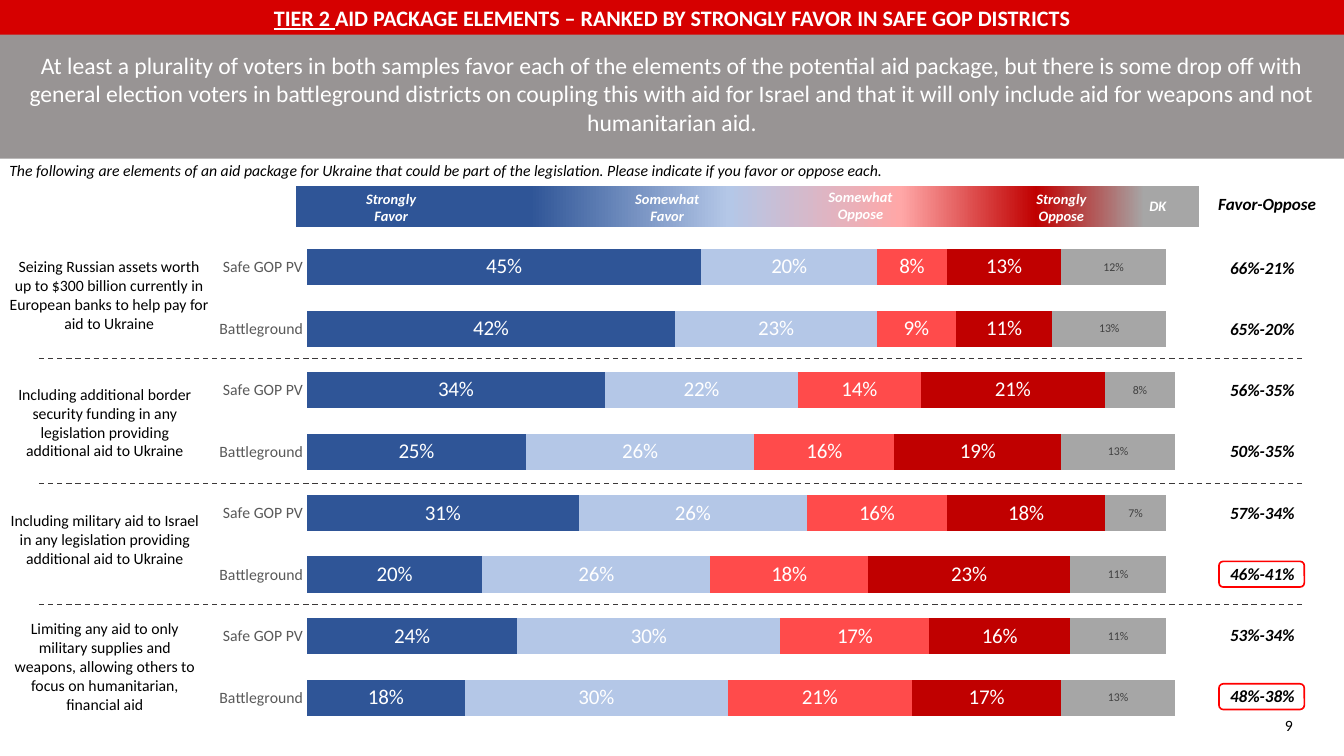
from lxml.etree import SubElement
from pptx import Presentation
from pptx.chart.data import CategoryChartData
from pptx.dml.color import RGBColor
from pptx.enum.chart import XL_CHART_TYPE, XL_LABEL_POSITION, XL_TICK_MARK
from pptx.enum.dml import MSO_LINE
from pptx.enum.shapes import MSO_CONNECTOR, MSO_SHAPE
from pptx.enum.text import PP_ALIGN
from pptx.oxml.ns import qn
from pptx.util import Inches, Pt

COLORS = {
    "banner": "989494", "title": "D60000", "rule": "3B3838", "mark": "FF0000",
    "white": "FFFFFF", "black": "000000", "axis": "595959", "dk_text": "404040",
    "strong_favor": "2F5597", "favor": "B4C7E7", "oppose": "FF4B4B",
    "fade": "FFA7A7", "strong_oppose": "C00000", "dk": "A6A6A6",
}
SERIES = ["strong_favor", "favor", "oppose", "strong_oppose", "dk"]
SAMPLES = ["Safe GOP PV", "Battleground"]

# text, box (x, y, w, h), then one (percentages, favor-oppose) pair per sample
ELEMENTS = [
    ("Seizing Russian assets worth up to $300 billion currently in European banks "
     "to help pay for aid to Ukraine", (0, 33.4, 16.25, 11.4),
     [((45, 20, 8, 13, 12), "66%-21%"), ((42, 23, 9, 11, 13), "65%-20%")]),
    ("Including additional border security funding in any legislation providing "
     "additional aid to Ukraine", (0, 50.25, 15.6, 11.4),
     [((34, 22, 14, 21, 8), "56%-35%"), ((25, 26, 16, 19, 13), "50%-35%")]),
    ("Including military aid to Israel in any legislation providing additional "
     "aid to Ukraine", (0, 67, 15.6, 8.9),
     [((31, 26, 16, 18, 7), "57%-34%"), ((20, 26, 18, 23, 11), "46%-41%")]),
    ("Limiting any aid to only military supplies and weapons, allowing others to "
     "focus on humanitarian, financial aid", (0, 81.25, 15.6, 13.9),
     [((24, 30, 17, 16, 11), "53%-34%"), ((18, 30, 21, 17, 13), "48%-38%")]),
]
LEGEND = [
    ("Strongly\nFavor", (22.36, 24.5, 13.5, 6.1)),
    ("Somewhat\nFavor", (41.77, 24.5, 15.75, 6.1)),
    ("Somewhat Oppose", (59.35, 24.25, 9.35, 6.1)),
    ("Strongly Oppose", (75.25, 24.5, 7.45, 6.1)),
    ("DK", (82.9, 25.4, 6.5, 3.1)),
]
LEGEND_STOPS = [(26, "strong_favor"), (48, "favor"), (67, "fade"),
                (82, "strong_oppose"), (94, "dk")]
DIVIDERS = [47.4, 64, 80]
MARKED = {"46%-41%", "48%-38%"}
ROW_TOP, ROW_STEP = 33.4, 8.1


def rgb(name):
    return RGBColor.from_string(COLORS[name])


class Deck:
    """Style and current slide; boxes are percentages of the slide's size."""

    font = "Calibri"

    def __init__(self, width, height):
        self.prs = Presentation()
        self.prs.slide_width, self.prs.slide_height = Inches(width), Inches(height)
        self.s = self.prs.slides.add_slide(self.prs.slide_layouts[6])

    def place(self, x, y, w, h):
        across, down = self.prs.slide_width / 100, self.prs.slide_height / 100
        return int(x * across), int(y * down), int(w * across), int(h * down)

    def style(self, font, size, color, bold=False, italic=False):
        font.name, font.size = self.font, Pt(size)
        font.bold, font.italic = bold, italic
        font.color.rgb = rgb(color)

    def text(self, box, text, size, color="black", align=PP_ALIGN.CENTER, **style):
        tf = self.s.shapes.add_textbox(*self.place(*box)).text_frame
        tf.word_wrap = True
        tf.text = text
        for p in tf.paragraphs:
            p.alignment = align
            self.style(p.font, size, color, **style)
        return tf.paragraphs[0]

    def block(self, box, fill=None, line=None, kind=MSO_SHAPE.RECTANGLE):
        sp = self.s.shapes.add_shape(kind, *self.place(*box))
        sp.shadow.inherit = False
        if fill:
            sp.fill.solid()
            sp.fill.fore_color.rgb = rgb(fill)
        else:
            sp.fill.background()
        if line:
            sp.line.color.rgb, sp.line.width = rgb(line), Pt(1.25)
        else:
            sp.line.fill.background()
        return sp

    def gradient(self, box, stops):
        sp = self.block(box)
        sp.fill.gradient()
        sp.fill.gradient_angle = 0
        gs_list = next(sp.element.iter(qn("a:gsLst")))
        for gs in list(gs_list):
            gs_list.remove(gs)
        for percent, color in stops:
            gs = SubElement(gs_list, qn("a:gs"), pos=str(percent * 1000))
            SubElement(gs, qn("a:srgbClr"), val=COLORS[color])

    def divider(self, x1, x2, y):
        left, top, width, _ = self.place(x1, y, x2 - x1, 0)
        line = self.s.shapes.add_connector(
            MSO_CONNECTOR.STRAIGHT, left, top, left + width, top)
        line.line.color.rgb, line.line.width = rgb("rule"), Pt(1)
        line.line.dash_style = MSO_LINE.DASH
        SubElement(line.element.spPr, qn("a:effectLst"))

    def stacked_bars(self, box, categories, columns, plot_area):
        data = CategoryChartData(number_format="0%")
        data.categories = categories
        for i, values in enumerate(columns, 1):
            data.add_series(f"Series {i}", values)
        chart = self.s.shapes.add_chart(
            XL_CHART_TYPE.BAR_STACKED, *self.place(*box), data).chart
        chart.has_legend = chart.has_title = False
        self.style(chart.font, 10, "black")

        axis = chart.value_axis
        axis.visible = axis.has_major_gridlines = False
        axis.minimum_scale, axis.maximum_scale = 0, 1
        axis = chart.category_axis
        axis.major_tick_mark = XL_TICK_MARK.NONE
        axis.format.line.fill.background()
        self.style(axis.tick_labels.font, 12, "axis")

        plot = chart.plots[0]
        plot.gap_width, plot.overlap = 70, 100
        plot.vary_by_categories = False
        for series, color in zip(plot.series, SERIES):
            series.format.fill.solid()
            series.format.fill.fore_color.rgb = rgb(color)
            labels = series.data_labels
            labels.show_value = True
            labels.position = XL_LABEL_POSITION.CENTER
            labels.number_format, labels.number_format_is_linked = "0%", False
            self.style(labels.font, *((9, "dk_text") if color == "dk" else (16, "white")))
        self.fix_plot(chart, plot_area)

    def fix_plot(self, chart, plot_area):
        """Pin the inner plot area to shares (x, y, w, h) of the chart."""
        area = next(chart.element.iter(qn("c:plotArea")))
        layout = area.find(qn("c:layout"))
        if layout is None:
            layout = SubElement(area, qn("c:layout"))
            area.insert(0, layout)
        manual = SubElement(layout, qn("c:manualLayout"))
        settings = [("layoutTarget", "inner"), ("xMode", "edge"), ("yMode", "edge"),
                    *zip("xywh", plot_area)]
        for tag, value in settings:
            SubElement(manual, qn(f"c:{tag}"), val=str(value))


def main():
    deck = Deck(14.22, 8)
    deck.block((0, 0, 100, 21), "banner")
    deck.block((0, 0, 100, 4.6), "title")
    p = deck.text((0, 0, 100, 4.9), "TIER 2 ", 16.8, "white", bold=True)
    p.runs[0].font.underline = True
    r = p.add_run()
    r.text = "AID PACKAGE ELEMENTS – RANKED BY STRONGLY FAVOR IN SAFE GOP DISTRICTS"
    deck.text((0.35, 6.1, 99.3, 12.6),
              "At least a plurality of voters in both samples favor each of the elements "
              "of the potential aid package, but there is some drop off with general "
              "election voters in battleground districts on coupling this with aid for "
              "Israel and that it will only include aid for weapons and not humanitarian "
              "aid.", 18, "white")
    deck.text((0, 20.6, 81, 3.8),
              "The following are elements of an aid package for Ukraine that could be part "
              "of the legislation. Please indicate if you favor or oppose each.",
              12, align=PP_ALIGN.LEFT, italic=True)

    deck.gradient((22, 24.6, 67.2, 5.4), LEGEND_STOPS)
    for label, box in LEGEND:
        deck.text(box, label, 11, "white", bold=True, italic=True)
    deck.text((89.75, 25, 9.05, 4), "Favor-Oppose", 13, bold=True, italic=True)

    for y in DIVIDERS:
        deck.divider(2.9, 97.1, y)
    for label, box, _ in ELEMENTS:
        deck.text(box, label, 12)

    rows = [row for *_, pair in ELEMENTS for row in pair]
    for i, (_, net) in enumerate(rows):
        y = ROW_TOP + i * ROW_STEP
        deck.text((90.2, y, 7.45, 4), net, 13, bold=True, italic=True)
        if net in MARKED:
            deck.block((90.7, y + 0.35, 6.35, 3.4), line="mark",
                       kind=MSO_SHAPE.ROUNDED_RECTANGLE)

    # Bars are plotted from the bottom up
    columns = zip(*([v / 100 for v in values] for values, _ in reversed(rows)))
    deck.stacked_bars((14.63, 28.1, 74.5, 72), SAMPLES[::-1] * len(ELEMENTS), columns,
                      (0.11, 0.044, 0.876, 0.904))
    deck.text((94.9, 94.1, 3.9, 3.8), "9", 12, align=PP_ALIGN.LEFT)
    deck.prs.save("out.pptx")


if __name__ == "__main__":
    main()
